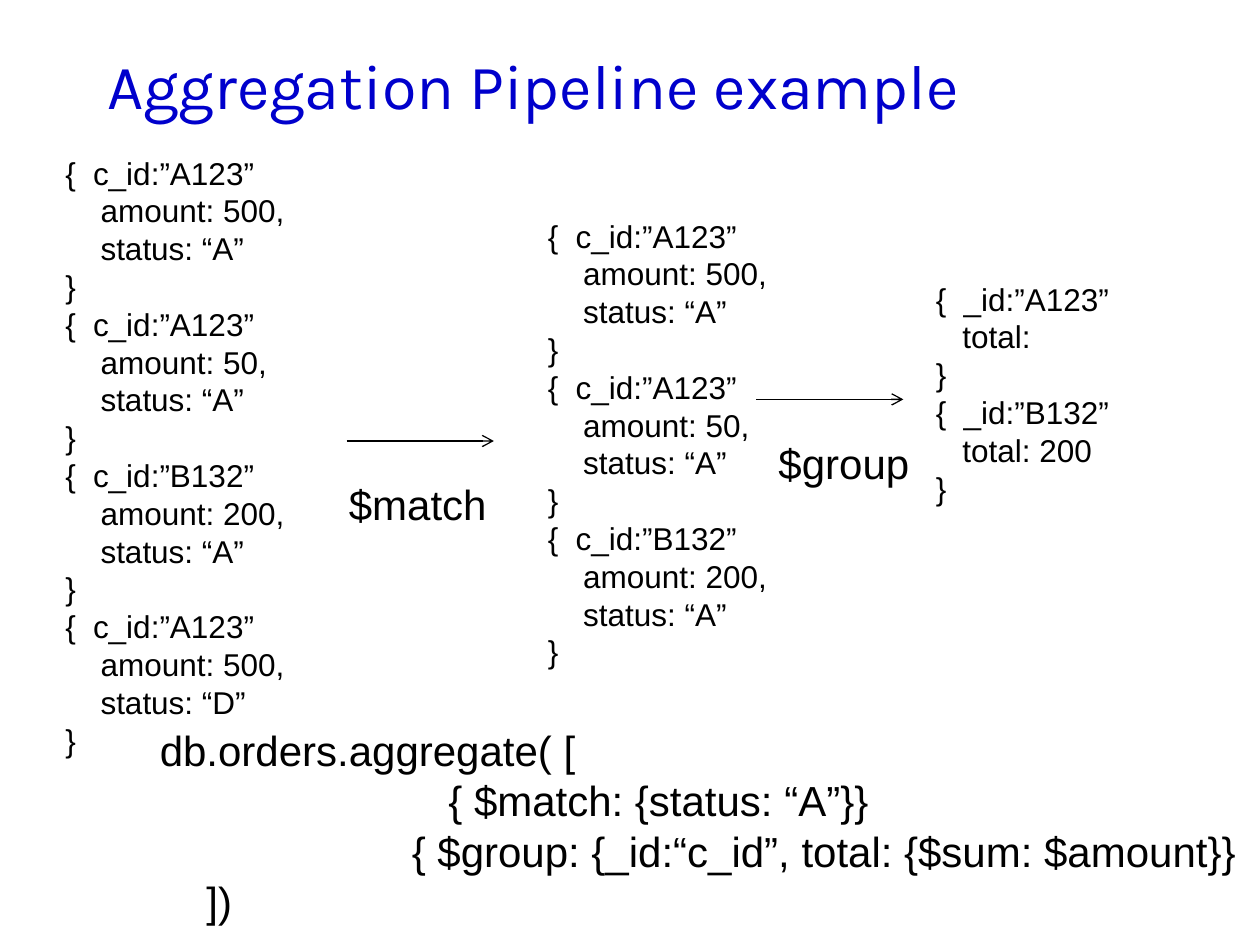
from pptx import Presentation
from pptx.dml.color import RGBColor
from pptx.enum.shapes import MSO_CONNECTOR
from pptx.enum.text import MSO_ANCHOR, PP_ALIGN
from pptx.oxml.ns import qn
from pptx.util import Inches, Pt
from lxml.etree import SubElement

TITLE = "Aggregation Pipeline example"
ORDERS = [("A123", 500, "A"), ("A123", 50, "A"), ("B132", 200, "A"), ("A123", 500, "D")]
TOTALS = [("A123", ""), ("B132", " 200")]
STAGES = [("$match", 2.67, 3.75, 1.31), ("$group", 6.08, 3.42, 1.25)]
ARROWS = [(2.75, 3.5), (6, 3.17)]
ARROW_LENGTH = 1.17
QUERY = [
    ("db.orders.aggregate( [", 0, 0),
    ("{ $match: {status: “A”}}", 2.29, 0),
    ("{ $group: {_id:“c_id”, total: {$sum: $amount}}", 2, 0),
    ("])", 0.37, 0),
]
BRACE_GAP = 0.22


def document(key, fields, indent):
    opening = ("{\t" + key, BRACE_GAP, -BRACE_GAP)
    return [opening, *((field, indent, 0) for field in fields), ("}", 0, 0)]


def order_lines(orders):
    return [
        line
        for customer, amount, status in orders
        for line in document(
            f"c_id:”{customer}”", [f"amount: {amount},", f"status: “{status}”"], 0.28
        )
    ]


def total_lines(totals):
    return [
        line
        for customer, total in totals
        for line in document(f"_id:”{customer}”", [f"total:{total}"], 0.21)
    ]


def add_run(paragraph, text, size, font_name, color):
    run = paragraph.add_run()
    run.text = text
    run.font.size = Pt(size)
    run.font.name = font_name
    run.font.color.rgb = RGBColor.from_string(color)


def add_lines(slide, lines, left, top, width, size):
    pitch = size * 1.2
    height = len(lines) * pitch / 72 + 0.1
    box = slide.shapes.add_textbox(Inches(left), Inches(top), Inches(width), Inches(height))
    frame = box.text_frame
    frame.word_wrap = True
    for index, (text, margin, hanging) in enumerate(lines):
        paragraph = frame.add_paragraph() if index else frame.paragraphs[0]
        paragraph.line_spacing = Pt(pitch)
        properties = paragraph._p.get_or_add_pPr()
        properties.set("marL", str(Inches(margin)))
        properties.set("indent", str(Inches(hanging)))
        add_run(paragraph, text, size, "Arial", "000000")


def add_arrow(slide, left, top):
    arrow = slide.shapes.add_connector(
        MSO_CONNECTOR.STRAIGHT,
        Inches(left), Inches(top), Inches(left + ARROW_LENGTH), Inches(top),
    )
    arrow.line.color.rgb = RGBColor.from_string("000000")
    arrow.line.width = Pt(0.75)
    SubElement(arrow.line._get_or_add_ln(), qn("a:tailEnd"), type="arrow")
    SubElement(arrow._element.spPr, qn("a:effectLst"))


def add_title(slide):
    title = slide.shapes.title
    title.left, title.top = Inches(0.75), Inches(0.17)
    title.width, title.height = Inches(8.5), Inches(1)
    title.text_frame.vertical_anchor = MSO_ANCHOR.MIDDLE
    heading = title.text_frame.paragraphs[0]
    heading.alignment = PP_ALIGN.LEFT
    add_run(heading, TITLE, 36, "Karla", "0000CC")


def main():
    presentation = Presentation()
    presentation.slide_width, presentation.slide_height = Inches(10), Inches(7.5)
    slide = presentation.slides.add_slide(presentation.slide_layouts[5])
    add_title(slide)
    matched = [order for order in ORDERS if order[2] == "A"]
    add_lines(slide, order_lines(ORDERS), 0.42, 1.17, 1.96, 18)
    add_lines(slide, order_lines(matched), 4.25, 1.67, 1.96, 18)
    add_lines(slide, total_lines(TOTALS), 7.33, 2.17, 1.59, 18)
    for left, top in ARROWS:
        add_arrow(slide, left, top)
    for stage, left, top, width in STAGES:
        add_lines(slide, [(stage, 0, 0)], left, top, width, 24)
    add_lines(slide, QUERY, 1.17, 5.7, 8.83, 24)
    presentation.save("out.pptx")


if __name__ == "__main__":
    main()
